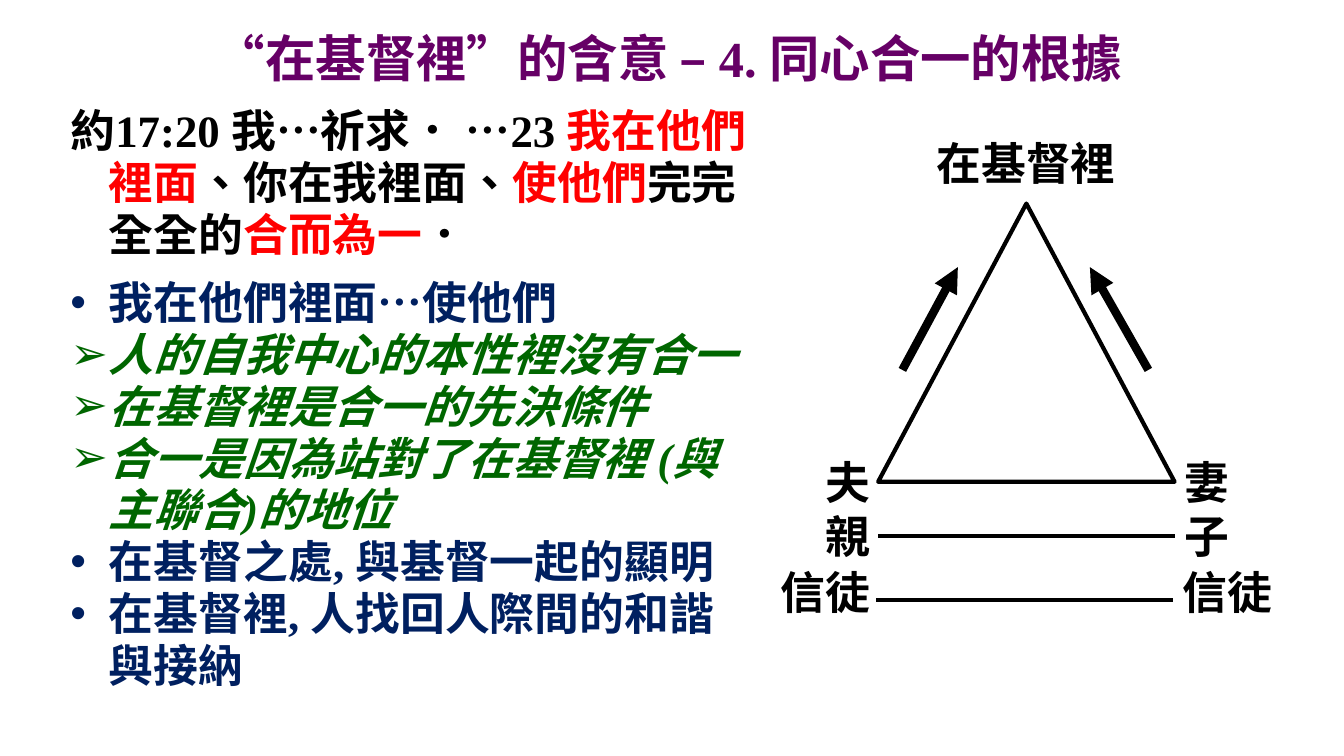
from dataclasses import dataclass

from lxml import etree
from pptx import Presentation
from pptx.dml.color import RGBColor
from pptx.enum import lang, shapes, text
from pptx.oxml import ns
from pptx.util import Inches, Pt


@dataclass(frozen=True)
class Theme:
    font: str = "Times New Roman"
    head: int = 36
    body: int = 32
    lead: int = 37
    thin: int = 3
    thick: int = 6
    plum: str = "660066"
    black: str = "000000"
    red: str = "FF0000"
    navy: str = "002060"
    green: str = "006600"


THEME = Theme()

VERSE = [
    ("約17:20 我…祈求． …23 ", THEME.black),
    ("我在他們裡面", THEME.red),
    ("、你在我裡面、", THEME.black),
    ("使他們", THEME.red),
    ("完完全全的", THEME.black),
    ("合而為一", THEME.red),
    ("．", THEME.black),
]
POINTS = [
    ("•", "我在他們裡面…使他們"),
    ("➢", "人的自我中心的本性裡沒有合一"),
    ("➢", "在基督裡是合一的先決條件"),
    ("➢", "合一是因為站對了在基督裡 (與主聯合)的地位"),
    ("•", "在基督之處, 與基督一起的顯明"),
    ("•", "在基督裡, 人找回人際間的和諧與接納"),
]
LABELS = [
    ("在基督裡", 9.19, 1.3, 2.05, 0.64),
    ("妻子", 11.65, 4.46, 0.37, 1.18),
    ("夫親", 8.09, 4.46, 0.47, 1.18),
    ("信徒", 11.63, 5.55, 1.26, 0.64),
    ("信徒", 7.64, 5.55, 1.39, 0.64),
]
ARROWS = [(11.39, 3.67, 10.81, 2.65), (8.95, 3.67, 9.5, 2.65)]
RULES = [(8.71, 5.32, 11.65, 5.32), (8.69, 5.95, 11.63, 5.95)]


def color(code):
    return RGBColor.from_string(code)


def add_run(para, words, code, size=THEME.body, slant=False):
    run = para.add_run()
    run.text = words
    font = run.font
    font.name = THEME.font
    font.size = Pt(size)
    font.bold = True
    font.italic = slant
    font.color.rgb = color(code)
    font.language_id = lang.MSO_LANGUAGE_ID.TRADITIONAL_CHINESE


def add_box(slide, *place):
    box = slide.shapes.add_textbox(*map(Inches, place))
    box.text_frame.word_wrap = True
    return box.text_frame


def add_label(slide, words, *place):
    frame = add_box(slide, *place)
    add_run(frame.paragraphs[0], words, THEME.black)


def hang(para, mark=None):
    para.line_spacing = Pt(THEME.lead)
    props = para._p.get_or_add_pPr()
    props.set("marL", str(Inches(0.38)))
    props.set("indent", str(Inches(-0.38)))
    if mark:
        face = etree.SubElement(props, ns.qn("a:buFont"))
        face.set("typeface", "Arial")
        bullet = etree.SubElement(props, ns.qn("a:buChar"))
        bullet.set("char", mark)


def add_line(slide, ends, width, arrow=False):
    line = slide.shapes.add_connector(
        shapes.MSO_CONNECTOR.STRAIGHT, *map(Inches, ends))
    line.line.color.rgb = color(THEME.black)
    line.line.width = Pt(width)
    if arrow:
        tip = etree.SubElement(line.line._get_or_add_ln(), ns.qn("a:tailEnd"))
        tip.set("type", "triangle")
    etree.SubElement(line._element.spPr, ns.qn("a:effectLst"))


def set_title(slide):
    title = slide.shapes.title
    title.left, title.top = Inches(0.29), Inches(0.22)
    title.width, title.height = Inches(12.68), Inches(0.69)
    frame = title.text_frame
    frame.vertical_anchor = text.MSO_ANCHOR.MIDDLE
    para = frame.paragraphs[0]
    para.alignment = text.PP_ALIGN.CENTER
    add_run(para, "“在基督裡”的含意 – 4. 同心合一的根據",
            THEME.plum, THEME.head)


def add_body(slide):
    frame = add_box(slide, 0.6, 0.99, 7.01, 5.88)
    verse = frame.paragraphs[0]
    hang(verse)
    for words, code in VERSE:
        add_run(verse, words, code)
    for rank, (mark, words) in enumerate(POINTS):
        para = frame.add_paragraph()
        if rank == 0:
            para.space_before = Pt(12)
        hang(para, mark)
        sub = mark == "➢"
        add_run(para, words, THEME.green if sub else THEME.navy, slant=sub)


def add_peak(slide):
    peak = slide.shapes.add_shape(
        shapes.MSO_SHAPE.ISOSCELES_TRIANGLE,
        Inches(8.71), Inches(2.02), Inches(2.94), Inches(2.76))
    peak.shadow.inherit = False
    peak.fill.background()
    peak.line.color.rgb = color(THEME.black)
    peak.line.width = Pt(THEME.thin)


def main():
    deck = Presentation()
    deck.slide_width, deck.slide_height = Inches(13.33), Inches(7.5)
    slide = deck.slides.add_slide(deck.slide_layouts[5])
    set_title(slide)
    add_body(slide)
    add_peak(slide)
    for label in LABELS:
        add_label(slide, *label)
    for ends in ARROWS:
        add_line(slide, ends, THEME.thick, arrow=True)
    for ends in RULES:
        add_line(slide, ends, THEME.thin)
    deck.save("out.pptx")


if __name__ == "__main__":
    main()
